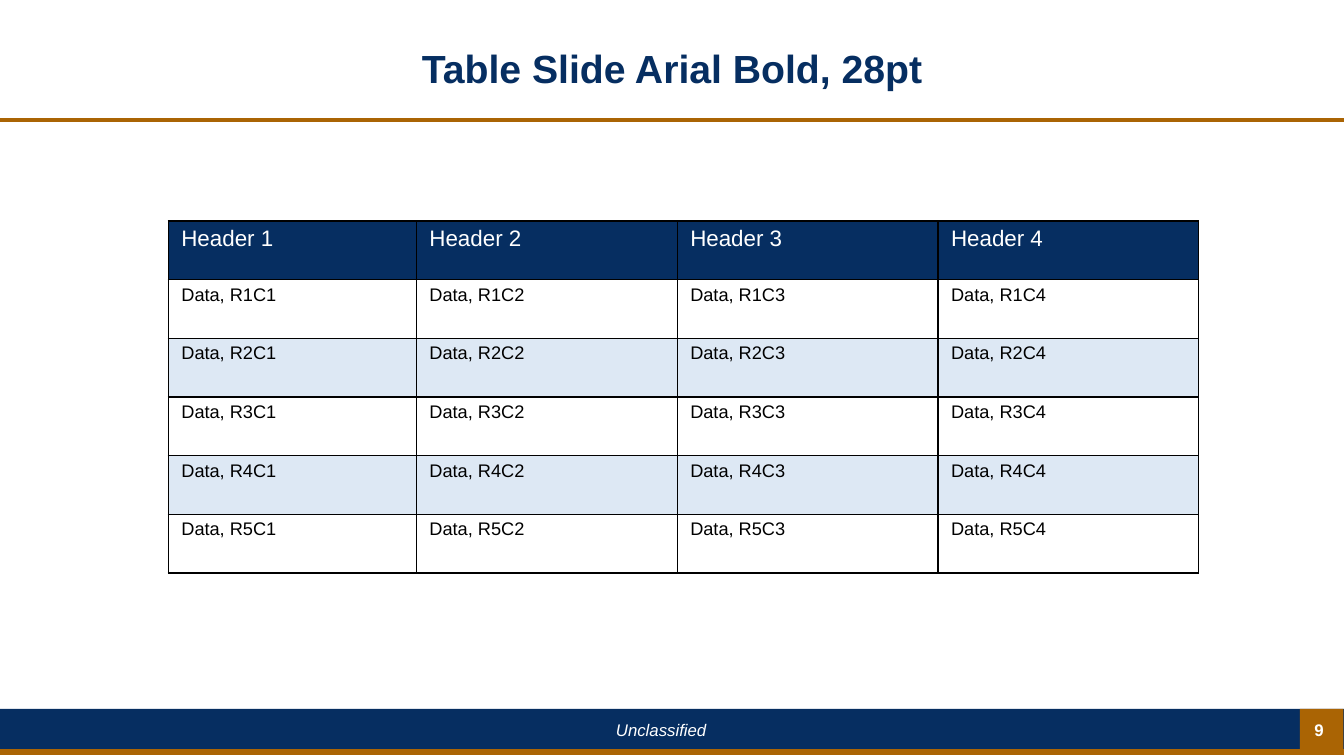
import lxml.etree
import pptx
import pptx.dml.color
import pptx.enum.shapes
import pptx.enum.text
import pptx.oxml.ns
import pptx.util

Pt = pptx.util.Pt
ANCHOR = pptx.enum.text.MSO_ANCHOR
COLORS = {
    "navy": "062E61",
    "bronze": "AA6404",
    "band": "DDE8F4",
    "white": "FFFFFF",
    "black": "000000",
}
WIDTH, HEIGHT = 960, 540


def color(name):
    return pptx.dml.color.RGBColor.from_string(COLORS[name])


def add_text(page, text, left, top, width, height, size, ink, anchor, bold=False, italic=False):
    box = page.shapes.add_textbox(Pt(left), Pt(top), Pt(width), Pt(height))
    box.text_frame.word_wrap = True
    box.text_frame.vertical_anchor = anchor
    para = box.text_frame.paragraphs[0]
    para.text = text
    para.alignment = pptx.enum.text.PP_ALIGN.CENTER
    para.font.name = "Arial"
    para.font.size = Pt(size)
    para.font.bold = bold
    para.font.italic = italic
    para.font.color.rgb = color(ink)
    return para


deck = pptx.Presentation()
deck.slide_width, deck.slide_height = Pt(WIDTH), Pt(HEIGHT)
page = deck.slides.add_slide(deck.slide_layouts[6])

# Footer bar and page number block
for left, width, fill in [(0, WIDTH, "navy"), (928.4, 31.2, "bronze")]:
    block = page.shapes.add_shape(
        pptx.enum.shapes.MSO_SHAPE.RECTANGLE, Pt(left), Pt(506.3), Pt(width), Pt(31))
    block.shadow.inherit = False
    block.fill.solid()
    block.fill.fore_color.rgb = color(fill)
    block.line.fill.background()

# Rules under the title and along the bottom
for y, weight in [(85.7, 3), (537.2, 4.5)]:
    rule = page.shapes.add_connector(
        pptx.enum.shapes.MSO_CONNECTOR.STRAIGHT, Pt(0), Pt(y), Pt(WIDTH), Pt(y))
    rule.line.color.rgb = color("bronze")
    rule.line.width = Pt(weight)
    lxml.etree.SubElement(rule._element.spPr, pptx.oxml.ns.qn("a:effectLst"))

# Title and footer text
title = add_text(page, "Table Slide Arial Bold, 28pt", 0, 13, WIDTH, 75.6, 28, "navy",
                 ANCHOR.MIDDLE, bold=True)
title.line_spacing = 0.9
add_text(page, "Unclassified", 367.2, 510.5, 210.2, 21.8, 12, "white", ANCHOR.TOP, italic=True)
add_text(page, "9", 926.6, 512.8, 31.2, 17.3, 12, "white", ANCHOR.MIDDLE, bold=True)

# Table
column_widths = [177.2, 186.3, 186.3, 186.3]
row_count, row_height = 6, 41.9
frame = page.shapes.add_table(
    row_count, len(column_widths), Pt(120.2), Pt(157.9),
    Pt(sum(column_widths)), Pt(row_count * row_height))
table = frame.table
for column, width in zip(table.columns, column_widths):
    column.width = Pt(width)

for r, row in enumerate(table.rows):
    row.height = Pt(row_height)
    for c, cell in enumerate(row.cells, start=1):
        if r == 0:
            text, size, ink, fill = f"Header {c}", 16, "white", "navy"
        else:
            text, size, ink = f"Data, R{r}C{c}", 13, "black"
            fill = "white" if r % 2 else "band"
        cell.margin_left = cell.margin_right = Pt(9.4)
        cell.margin_top = cell.margin_bottom = Pt(3.6)
        para = cell.text_frame.paragraphs[0]
        para.text = text
        para.font.name = "Arial"
        para.font.size = Pt(size)
        para.font.bold = False
        para.font.color.rgb = color(ink)

        # Thin black border on every side, then the fill
        properties = cell._tc.get_or_add_tcPr()
        for side in ("lnL", "lnR", "lnT", "lnB"):
            border = lxml.etree.SubElement(
                properties, pptx.oxml.ns.qn(f"a:{side}"), w=str(Pt(1)))
            paint = lxml.etree.SubElement(border, pptx.oxml.ns.qn("a:solidFill"))
            lxml.etree.SubElement(
                paint, pptx.oxml.ns.qn("a:srgbClr"), val=COLORS["black"])
        cell.fill.solid()
        cell.fill.fore_color.rgb = color(fill)

deck.save("out.pptx")
